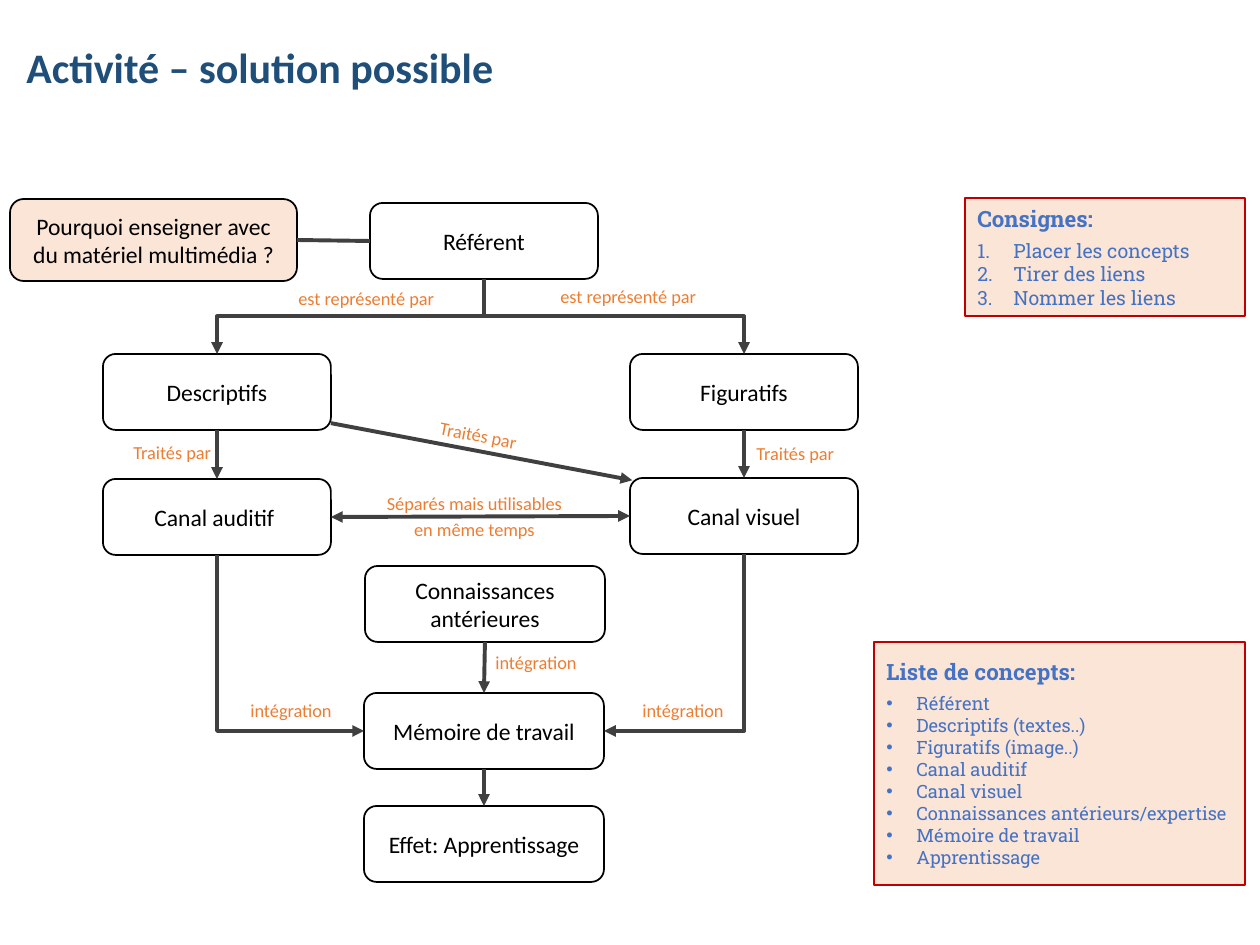
"""Build a concept-map slide about teaching with multimedia material."""
from dataclasses import dataclass

import pptx
import pptx.dml.color
import pptx.enum.shapes
import pptx.enum.text
import pptx.oxml.ns
import pptx.util
from lxml import etree

ALIGN = pptx.enum.text.PP_ALIGN
ANCHOR = pptx.enum.text.MSO_ANCHOR
SHAPE = pptx.enum.shapes.MSO_SHAPE
CONNECTOR = pptx.enum.shapes.MSO_CONNECTOR


@dataclass(frozen=True)
class Theme:
    body_font: str = "Calibri"
    panel_font: str = "Roboto Slab"
    title: str = "1F4E79"
    ink: str = "000000"
    label: str = "ED7D31"
    panel_text: str = "4472C4"
    panel_line: str = "C00000"
    peach: str = "FBE5D6"
    white: str = "FFFFFF"
    link: str = "404040"
    title_size: float = 24
    box_size: float = 13.5
    heading_size: float = 12.8
    label_size: float = 10.5
    outline_width: float = 1
    link_width: float = 2.25


THEME = Theme()
PX_PER_INCH = 126
TITLE = ("Activité – solution possible", (14, 25, 1134, 74))

SIDE, CENTRE, HEIGHT = 228, 240, 76
BOXES = {
    "question": ("Pourquoi enseigner avec du matériel multimédia ?", (10, 199, 287, 82), THEME.peach),
    "referent": ("Référent", (370, 203, SIDE, HEIGHT), THEME.white),
    "descriptive": ("Descriptifs", (103, 354, SIDE, HEIGHT), THEME.white),
    "figurative": ("Figuratifs", (630, 354, SIDE, HEIGHT), THEME.white),
    "auditory": ("Canal auditif ", (103, 479, SIDE, HEIGHT), THEME.white),
    "visual": ("Canal visuel", (630, 478, SIDE, HEIGHT), THEME.white),
    "knowledge": ("Connaissances antérieures", (365, 566, CENTRE, HEIGHT), THEME.white),
    "memory": ("Mémoire de travail", (364, 693, CENTRE, HEIGHT), THEME.white),
    "effect": ("Effet: Apprentissage", (364, 806, CENTRE, HEIGHT), THEME.white),
}

TOP, BOTTOM, LEFT, RIGHT = (0.5, 0), (0.5, 1), (0, 0.5), (1, 0.5)
STRAIGHT_LINKS = [
    ("question", RIGHT, "referent", LEFT, []),
    ("descriptive", BOTTOM, "auditory", TOP, ["tailEnd"]),
    ("descriptive", (1, 0.91), "visual", (0.01, 0.03), ["tailEnd"]),
    ("figurative", BOTTOM, "visual", TOP, ["tailEnd"]),
    ("knowledge", BOTTOM, "memory", TOP, ["tailEnd"]),
    ("memory", BOTTOM, "effect", TOP, ["tailEnd"]),
    ("auditory", RIGHT, "visual", LEFT, ["headEnd", "tailEnd"]),
]
BENT_LINKS = [
    ("referent", BOTTOM, "descriptive", TOP, "bentConnector3"),
    ("referent", BOTTOM, "figurative", TOP, "bentConnector3"),
    ("auditory", BOTTOM, "memory", LEFT, "bentConnector2"),
    ("visual", BOTTOM, "memory", RIGHT, "bentConnector2"),
]

LABELS = [
    (["Traités par"], (427, 418, 106, 35), 10.9),
    (["intégration"], (238, 693, 108, 35), 0),
    (["intégration"], (630, 693, 108, 35), 0),
    (["intégration"], (483, 645, 108, 35), 0),
    (["Séparés mais utilisables", "en même temps"], (373, 486, 203, 60), 0),
    (["Traités par"], (744, 436, 106, 35), 0),
    (["Traités par"], (121, 435, 106, 35), 0),
    (["est représenté par"], (286, 281, 164, 35), 0),
    (["est représenté par"], (548, 279, 164, 35), 0),
]

PANELS = [
    ("Consignes:", ["Placer les concepts", "Tirer des liens", "Nommer les liens"],
     (965, 198, 280, 118), 11.2, 36, ("buAutoNum", {"type": "arabicPeriod"})),
    ("Liste de concepts:",
     ["Référent", "Descriptifs (textes..)", "Figuratifs (image..)", "Canal auditif", "Canal visuel",
      "Connaissances antérieurs/expertise", "Mémoire de travail", "Apprentissage"],
     (874, 642, 371, 243), 10.5, 30, ("buChar", {"char": "•"})),
]


def px(value):
    return pptx.util.Emu(round(value * 914400 / PX_PER_INCH))


def rgb(code):
    return pptx.dml.color.RGBColor.from_string(code)


def add_xml(parent, tag, **attributes):
    return etree.SubElement(parent, pptx.oxml.ns.qn("a:" + tag), attributes)


def style(paragraph, font, size, colour, bold=False):
    for run in paragraph.runs:
        run.font.name = font
        run.font.size = pptx.util.Pt(size)
        run.font.color.rgb = rgb(colour)
        run.font.bold = bold


def add_block(slide, kind, frame, fill, line):
    shape = slide.shapes.add_shape(kind, *map(px, frame))
    shape.shadow.inherit = False
    shape.fill.solid()
    shape.fill.fore_color.rgb = rgb(fill)
    shape.line.color.rgb = rgb(line)
    shape.line.width = pptx.util.Pt(THEME.outline_width)
    shape.text_frame.word_wrap = True
    shape.text_frame.vertical_anchor = ANCHOR.MIDDLE
    return shape.text_frame


def add_box(slide, text, frame, fill):
    text_frame = add_block(slide, SHAPE.ROUNDED_RECTANGLE, frame, fill, THEME.ink)
    text_frame.text = text
    paragraph = text_frame.paragraphs[0]
    paragraph.alignment = ALIGN.CENTER
    style(paragraph, THEME.body_font, THEME.box_size, THEME.ink)


def add_panel(slide, heading, items, frame, size, indent, bullet):
    text_frame = add_block(slide, SHAPE.RECTANGLE, frame, THEME.peach, THEME.panel_line)
    text_frame.text = "\n".join([heading, *items])
    first, *rest = text_frame.paragraphs
    first.alignment = ALIGN.LEFT
    first.space_after = pptx.util.Pt(4)
    style(first, THEME.panel_font, THEME.heading_size, THEME.panel_text, True)
    for paragraph in rest:
        paragraph.alignment = ALIGN.LEFT
        style(paragraph, THEME.panel_font, size, THEME.panel_text)
        properties = paragraph._p.get_or_add_pPr()
        properties.set("marL", str(px(indent)))
        properties.set("indent", str(-px(indent)))
        add_xml(properties, "buFont", typeface="Arial" if bullet[0] == "buChar" else "+mj-lt")
        add_xml(properties, bullet[0], **bullet[1])


def add_label(slide, lines, frame, rotation):
    shape = slide.shapes.add_textbox(*map(px, frame))
    shape.rotation = rotation
    text_frame = shape.text_frame
    text_frame.word_wrap = False
    text_frame.auto_size = pptx.enum.text.MSO_AUTO_SIZE.SHAPE_TO_FIT_TEXT
    text_frame.text = "\n".join(lines)
    for paragraph in text_frame.paragraphs:
        paragraph.alignment = ALIGN.CENTER if len(lines) > 1 else ALIGN.LEFT
        style(paragraph, THEME.body_font, THEME.label_size, THEME.label)
    for paragraph in text_frame.paragraphs[1:]:
        paragraph.space_before = pptx.util.Pt(2)


def anchor_point(name, fraction):
    left, top, width, height = BOXES[name][1]
    return left + width * fraction[0], top + height * fraction[1]


def add_link(slide, kind, begin, end, arrows):
    connector = slide.shapes.add_connector(kind, *map(px, (*begin, *end)))
    connector.line.color.rgb = rgb(THEME.link)
    connector.line.width = pptx.util.Pt(THEME.link_width)
    line = connector.line._get_or_add_ln()
    for arrow in arrows:
        add_xml(line, arrow, type="triangle")
    properties = connector._element.spPr
    add_xml(properties, "effectLst")
    return properties


def add_bent_link(slide, begin, end, preset):
    middle_x, middle_y = (begin[0] + end[0]) / 2, (begin[1] + end[1]) / 2
    half_width, half_height = abs(end[1] - begin[1]) / 2, abs(end[0] - begin[0]) / 2
    properties = add_link(slide, CONNECTOR.ELBOW, (middle_x - half_width, middle_y - half_height),
                          (middle_x + half_width, middle_y + half_height), ["tailEnd"])
    properties.find(pptx.oxml.ns.qn("a:prstGeom")).set("prst", preset)
    transform = properties.find(pptx.oxml.ns.qn("a:xfrm"))
    goes_right = end[0] > begin[0]
    transform.set("rot", str((270 if goes_right else 90) * 60000))
    if goes_right:
        transform.set("flipH", "1")


def add_title(slide, text, frame):
    text_frame = slide.shapes.add_textbox(*map(px, frame)).text_frame
    text_frame.word_wrap = True
    text_frame.vertical_anchor = ANCHOR.BOTTOM
    text_frame.text = text
    text_frame.paragraphs[0].line_spacing = 0.9
    style(text_frame.paragraphs[0], THEME.body_font, THEME.title_size, THEME.title, True)


def main():
    presentation = pptx.Presentation()
    presentation.slide_width, presentation.slide_height = px(1260), px(945)
    slide = presentation.slides.add_slide(presentation.slide_layouts[6])
    for box in BOXES.values():
        add_box(slide, *box)
    for panel in PANELS:
        add_panel(slide, *panel)
    for source, start, target, finish, arrows in STRAIGHT_LINKS:
        add_link(slide, CONNECTOR.STRAIGHT, anchor_point(source, start), anchor_point(target, finish), arrows)
    for source, start, target, finish, preset in BENT_LINKS:
        add_bent_link(slide, anchor_point(source, start), anchor_point(target, finish), preset)
    for label in LABELS:
        add_label(slide, *label)
    add_title(slide, *TITLE)
    presentation.save("out.pptx")


if __name__ == "__main__":
    main()
